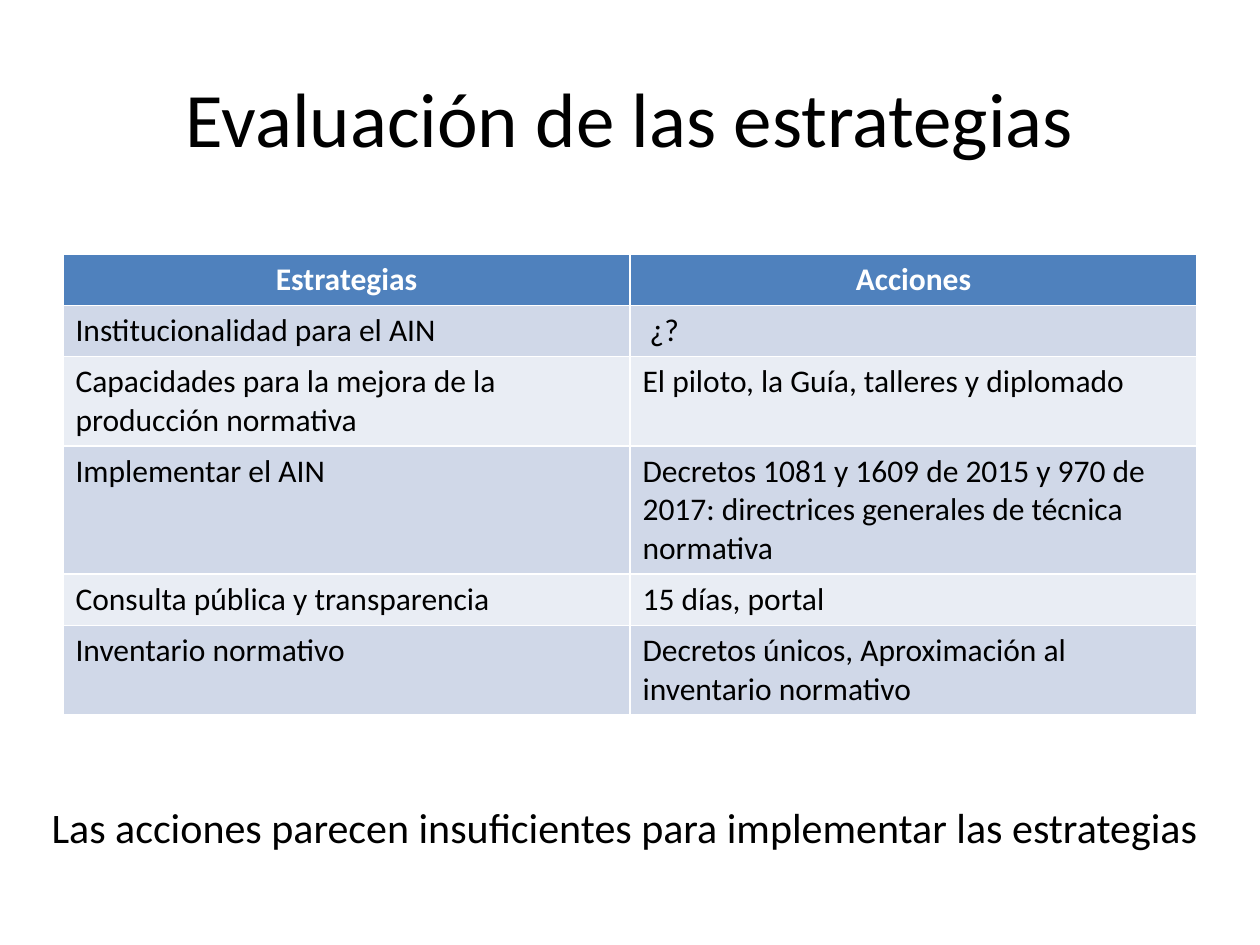
from pptx import Presentation
from pptx.dml.color import RGBColor
from pptx.enum.text import MSO_ANCHOR, MSO_AUTO_SIZE, PP_ALIGN
from pptx.util import Cm, Pt

COLORS = {
    "text": "000000",
    "header_text": "FFFFFF",
    "header": "4F81BD",
    "odd_row": "D0D8E8",
    "even_row": "E9EDF4",
}
ROWS = [
    ("Estrategias", "Acciones"),
    ("Institucionalidad para el AIN", " ¿?"),
    ("Capacidades para la mejora de la producción normativa",
     "El piloto, la Guía, talleres y diplomado"),
    ("Implementar el AIN",
     "Decretos 1081 y 1609 de 2015 y 970 de 2017: "
     "directrices generales de técnica normativa"),
    ("Consulta pública y transparencia", "15 días, portal"),
    ("Inventario normativo",
     "Decretos únicos, Aproximación al inventario normativo"),
]


def write(frame, text, size=18, color="text", bold=False, align=PP_ALIGN.LEFT):
    paragraph = frame.paragraphs[0]
    paragraph.alignment = align
    run = paragraph.add_run()
    run.text = text
    run.font.name = "Calibri"
    run.font.size = Pt(size)
    run.font.bold = bold
    run.font.color.rgb = RGBColor.from_string(COLORS[color])


prs = Presentation()
prs.slide_width, prs.slide_height = Cm(25.4), Cm(19.05)
slide = prs.slides.add_slide(prs.slide_layouts[5])

# Title
title = slide.shapes.title
title.left, title.top, title.width, title.height = Cm(1.27), Cm(0.76), Cm(22.86), Cm(3.18)
title.text_frame.vertical_anchor = MSO_ANCHOR.MIDDLE
write(title.text_frame, "Evaluación de las estrategias", size=44, align=PP_ALIGN.CENTER)

# Strategies and actions; the default table style draws the white borders
row_height = Cm(1.03)
strategies = slide.shapes.add_table(
    len(ROWS), 2, Cm(1.27), Cm(5.13), Cm(22.86), row_height * len(ROWS)).table
for row_index, row in enumerate(ROWS):
    is_header = row_index == 0
    fill = "header" if is_header else "odd_row" if row_index % 2 else "even_row"
    for column_index, text in enumerate(row):
        cell = strategies.cell(row_index, column_index)
        cell.fill.solid()
        cell.fill.fore_color.rgb = RGBColor.from_string(COLORS[fill])
        write(cell.text_frame, text, bold=is_header,
              color="header_text" if is_header else "text",
              align=PP_ALIGN.CENTER if is_header else PP_ALIGN.LEFT)

# Conclusion
conclusion = slide.shapes.add_textbox(Cm(0.79), Cm(16.03), Cm(23.95), Cm(1.27)).text_frame
conclusion.word_wrap = False
conclusion.auto_size = MSO_AUTO_SIZE.SHAPE_TO_FIT_TEXT
write(conclusion, "Las acciones parecen insuficientes para implementar las estrategias", size=24)

prs.save("out.pptx")
